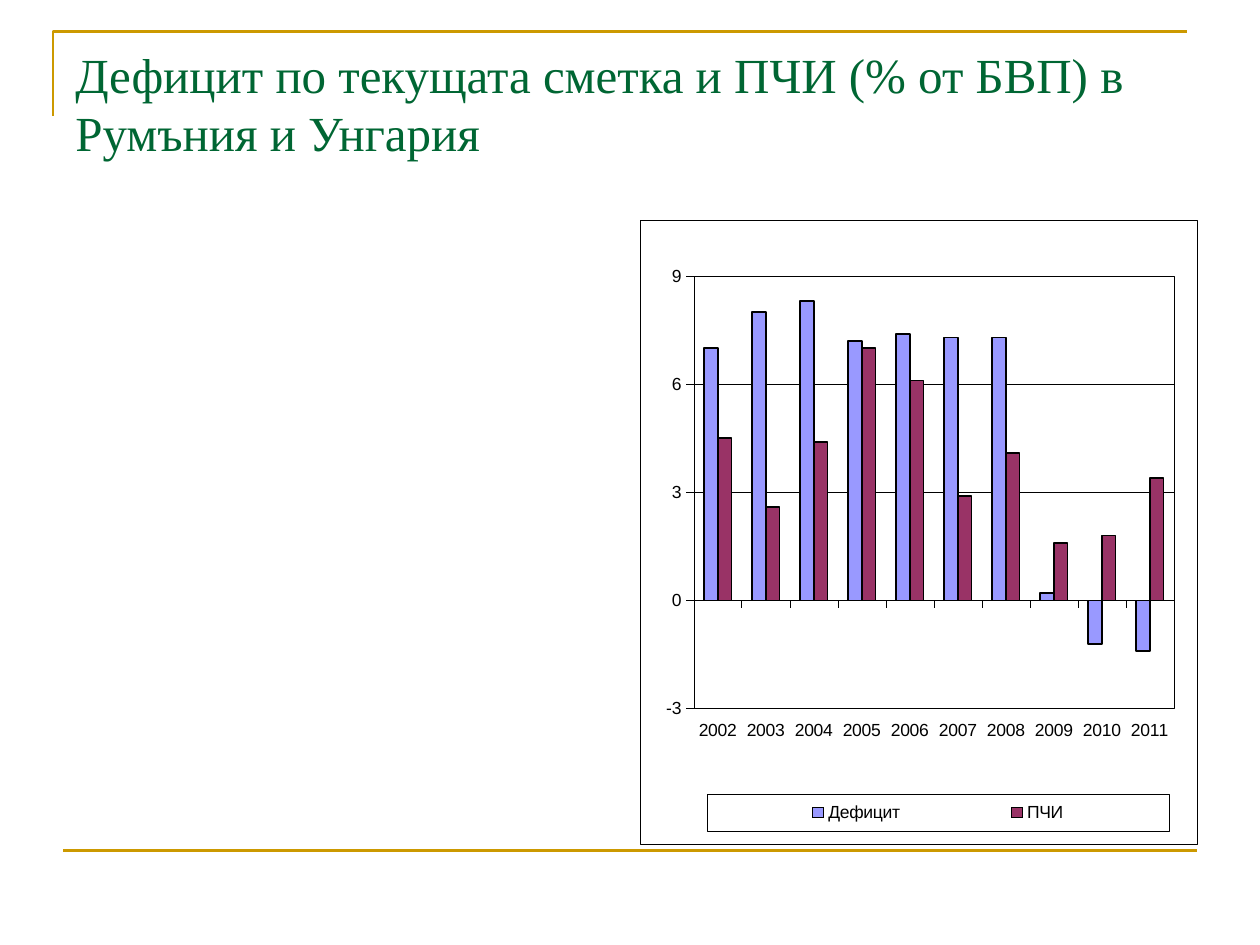
from dataclasses import dataclass

from lxml import etree
from pptx import Presentation
from pptx.chart.data import CategoryChartData
from pptx.dml.color import RGBColor
from pptx.enum.chart import (XL_CHART_TYPE, XL_LEGEND_POSITION,
                             XL_TICK_LABEL_POSITION, XL_TICK_MARK)
from pptx.enum.shapes import MSO_CONNECTOR
from pptx.enum.text import MSO_ANCHOR
from pptx.oxml import parse_xml
from pptx.oxml.ns import nsdecls, qn
from pptx.util import Inches, Pt

COLUMN = XL_CHART_TYPE.COLUMN_CLUSTERED
BOTTOM = XL_LEGEND_POSITION.BOTTOM
LOW = XL_TICK_LABEL_POSITION.LOW
OUT, NONE = XL_TICK_MARK.OUTSIDE, XL_TICK_MARK.NONE
STRAIGHT = MSO_CONNECTOR.STRAIGHT
TOP = MSO_ANCHOR.TOP


@dataclass(frozen=True)
class Theme:
    gold: RGBColor = RGBColor(0xCC, 0x99, 0x00)
    green: RGBColor = RGBColor(0x00, 0x66, 0x33)
    black: RGBColor = RGBColor(0, 0, 0)
    bars: tuple = (RGBColor(0x99, 0x99, 0xFF), RGBColor(0x99, 0x33, 0x66))
    serif: str = "Times New Roman"
    sans: str = "Arial"
    title: Pt = Pt(28)
    label: Pt = Pt(10)
    rule: Pt = Pt(1.5)
    hair: Pt = Pt(0.25)
    edge: Pt = Pt(1)


theme = Theme()


def frame(fill):
    """Shape properties with the given fill and a thin black border."""
    return parse_xml(
        f'<c:spPr {nsdecls("c", "a")}>{fill}<a:ln w="{theme.hair}"><a:solidFill>'
        f'<a:srgbClr val="{theme.black}"/></a:solidFill></a:ln></c:spPr>')


def layout(x, y, w, h, target=""):
    """Manual chart layout in fractions of the chart's size."""
    return parse_xml(
        f'<c:layout {nsdecls("c")}><c:manualLayout>{target}'
        f'<c:xMode val="edge"/><c:yMode val="edge"/><c:x val="{x}"/>'
        f'<c:y val="{y}"/><c:w val="{w}"/><c:h val="{h}"/>'
        f'</c:manualLayout></c:layout>')


prs = Presentation()
prs.slide_width, prs.slide_height = Inches(10), Inches(7.5)
slide = prs.slides.add_slide(prs.slide_layouts[6])
shapes = slide.shapes

# Gold corner and bottom rule
pen = shapes.build_freeform(Inches(0.42), Inches(0.92))
pen.add_line_segments([(Inches(0.42), Inches(0.25)),
                       (Inches(9.42), Inches(0.25))], close=False)
corner = pen.convert_to_shape()
corner.shadow.inherit = False
corner.fill.background()
rule = shapes.add_connector(STRAIGHT, Inches(0.5), Inches(6.75),
                            Inches(9.5), Inches(6.75))
etree.SubElement(rule._element.spPr, qn("a:effectLst"))
for item in (corner, rule):
    item.line.color.rgb = theme.gold
    item.line.width = theme.rule

# Title
box = shapes.add_textbox(Inches(0.5), Inches(0.3), Inches(9), Inches(1.25))
text = box.text_frame
text.word_wrap = True
text.vertical_anchor = TOP
run = text.paragraphs[0].add_run()
run.text = "Дефицит по текущата сметка и ПЧИ (% от БВП) в Румъния и Унгария"
run.font.name = theme.serif
run.font.size = theme.title
run.font.color.rgb = theme.green

# Chart
data = CategoryChartData(number_format="0.0")
data.categories = [str(year) for year in range(2002, 2012)]
data.add_series("Дефицит", (7, 8, 8.3, 7.2, 7.4, 7.3, 7.3, 0.2, -1.2, -1.4))
data.add_series("ПЧИ", (4.5, 2.6, 4.4, 7, 6.1, 2.9, 4.1, 1.6, 1.8, 3.4))
chart = shapes.add_chart(COLUMN, Inches(5.08), Inches(1.75),
                         Inches(4.42), Inches(4.95), data).chart
chart.has_title = False
chart.has_legend = True
legend = chart.legend
legend.position = BOTTOM
legend.include_in_layout = False

plot = chart.plots[0]
plot.gap_width = 150
plot.overlap = 0
plot.vary_by_categories = False
for series, color in zip(plot.series, theme.bars):
    series.invert_if_negative = False
    series.format.fill.solid()
    series.format.fill.fore_color.rgb = color
    series.format.line.color.rgb = theme.black
    series.format.line.width = theme.edge

cats, vals = chart.category_axis, chart.value_axis
cats.tick_label_position = LOW
cats.has_major_gridlines = False
vals.minimum_scale, vals.maximum_scale, vals.major_unit = -3, 9, 3
vals.has_major_gridlines = True
vals.tick_labels.number_format = "0"
vals.tick_labels.number_format_is_linked = False
for axis in (cats, vals):
    axis.major_tick_mark, axis.minor_tick_mark = OUT, NONE
for part in (cats, vals, vals.major_gridlines):
    part.format.line.color.rgb = theme.black
    part.format.line.width = theme.hair
for font in (chart.font, cats.tick_labels.font, vals.tick_labels.font,
             legend.font):
    font.name = theme.sans
    font.size = theme.label
    font.color.rgb = theme.black

# Frames and placement of chart, plot and legend
white = '<a:solidFill><a:srgbClr val="FFFFFF"/></a:solidFill>'
space = chart._chartSpace
space.find(qn("c:chart")).addnext(frame(white))
area = space.find(".//" + qn("c:plotArea"))
for old in area.findall(qn("c:layout")):
    area.remove(old)
area.insert(0, layout(0.096, 0.089, 0.863, 0.694,
                      '<c:layoutTarget val="inner"/>'))
area.append(frame("<a:noFill/>"))
key = legend._element
for old in key.findall(qn("c:layout")):
    key.remove(old)
key.find(qn("c:legendPos")).addnext(layout(0.12, 0.92, 0.83, 0.06))
key.find(qn("c:overlay")).addnext(frame(white))

prs.save("out.pptx")
